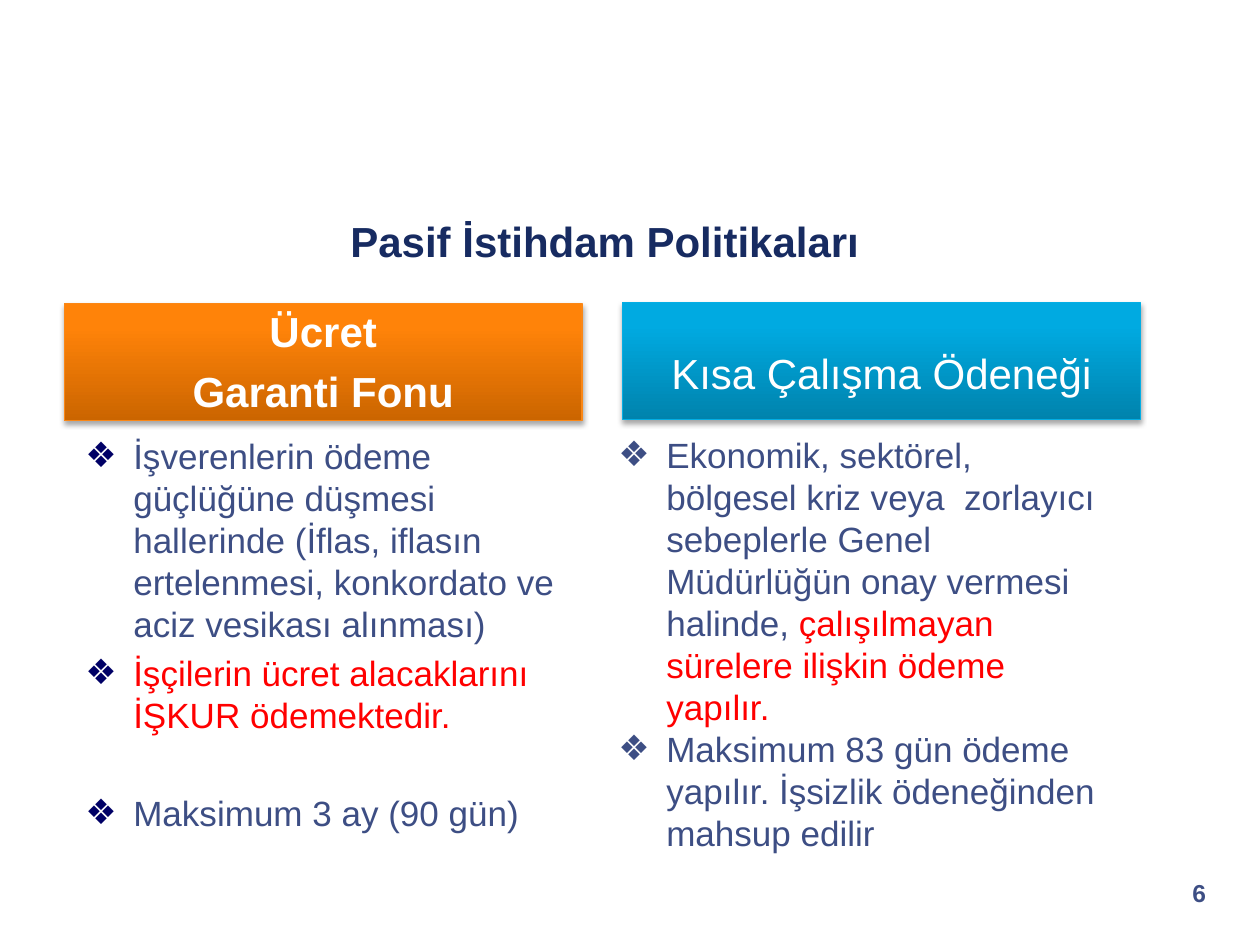
from dataclasses import dataclass

from lxml import etree
from pptx import Presentation
from pptx.dml.color import RGBColor
from pptx.enum import shapes, text
from pptx.oxml import ns
from pptx.util import Inches, Pt


@dataclass(frozen=True)
class Theme:
    font: str = "Arial"
    title: str = "172B61"
    body: str = "3D4E84"
    accent: str = "FF0000"
    bullet: str = "000066"
    white: str = "FFFFFF"
    orange: tuple = ("CB6500", "FF8309", "FA8716")  # dark, light, outline
    blue: tuple = ("0083AD", "00AAE1", "04AEE4")
    head_size: int = 24
    body_size: int = 20
    number_size: int = 14


THEME = Theme()


def rgb(value):
    return RGBColor.from_string(value)


def add_span(para, words, size, color, bold=False):
    span = para.add_run()
    span.text = words
    span.font.name = THEME.font
    span.font.size = Pt(size)
    span.font.bold = bold
    span.font.color.rgb = rgb(color)


def add_box(page, left, top, width, height, anchor=text.MSO_ANCHOR.TOP):
    box = page.shapes.add_textbox(Inches(left), Inches(top), Inches(width), Inches(height))
    box.text_frame.word_wrap = True
    box.text_frame.vertical_anchor = anchor
    return box.text_frame


def add_line(page, place, words, size, color, align):
    """A single bold line, such as the title or the page number."""
    anchor = text.MSO_ANCHOR.MIDDLE if align == text.PP_ALIGN.CENTER else text.MSO_ANCHOR.TOP
    para = add_box(page, *place, anchor).paragraphs[0]
    para.alignment = align
    add_span(para, words, size, color, bold=True)


def add_shadow(shape):
    effects = etree.SubElement(shape._element.spPr, ns.qn("a:effectLst"))
    shadow = etree.SubElement(effects, ns.qn("a:outerShdw"), blurRad=str(Pt(3.1)),
                              dist=str(Pt(1.8)), dir="5400000", rotWithShape="0")
    color = etree.SubElement(shadow, ns.qn("a:srgbClr"), val="000000")
    etree.SubElement(color, ns.qn("a:alpha"), val="35000")


def add_header(page, left, top, lines, colors, bold, insets):
    """A shaded banner with centred lines."""
    dark, light, outline = colors
    banner = page.shapes.add_shape(shapes.MSO_SHAPE.RECTANGLE, Inches(left), Inches(top),
                                   Inches(4.11), Inches(0.93))
    banner.fill.gradient()
    banner.fill.gradient_angle = 90
    for stop, position, color in zip(banner.fill.gradient_stops, (0, 0.8), (dark, light)):
        stop.position = position
        stop.color.rgb = rgb(color)
    banner.line.color.rgb = rgb(outline)
    banner.line.width = Pt(0.75)
    add_shadow(banner)

    frame = banner.text_frame
    frame.word_wrap = True
    frame.vertical_anchor = text.MSO_ANCHOR.MIDDLE
    frame.margin_left = frame.margin_right = Inches(0.19)
    frame.margin_top, frame.margin_bottom = map(Inches, insets)
    for index, line in enumerate(lines):
        para = frame.paragraphs[0] if index == 0 else frame.add_paragraph()
        para.alignment = text.PP_ALIGN.CENTER
        para.line_spacing = 0.9
        if index < len(lines) - 1:
            para.space_after = Pt(8.4)
        add_span(para, line, THEME.head_size, THEME.white, bold)


def add_bullet(para, color):
    props = para._p.get_or_add_pPr()
    props.set("marL", str(Inches(0.38)))
    props.set("indent", str(-Inches(0.38)))
    holder = etree.SubElement(props, ns.qn("a:buClr"))
    etree.SubElement(holder, ns.qn("a:srgbClr"), val=color)
    etree.SubElement(props, ns.qn("a:buFont"), typeface=THEME.font)
    etree.SubElement(props, ns.qn("a:buChar"), char="❖")


def add_list(page, place, items, bullet_color):
    """Bulleted items, each given as (space before, spans)."""
    frame = add_box(page, *place)
    for index, (space, spans) in enumerate(items):
        para = frame.paragraphs[0] if index == 0 else frame.add_paragraph()
        add_bullet(para, bullet_color)
        para.space_before = Pt(space)
        for words, color in spans:
            add_span(para, words, THEME.body_size, color)


def build_page(page):
    # Title
    add_line(page, (0.51, 1.41, 8.58, 1), "Pasif İstihdam Politikaları",
             THEME.head_size, THEME.title, text.PP_ALIGN.CENTER)

    # Wage guarantee fund
    add_header(page, 0.51, 2.41, ["Ücret", "Garanti Fonu"], THEME.orange, True, (0.03, 0))
    add_list(page, (0.58, 3.4, 4.04, 3.55), [
        (0, [("İşverenlerin ödeme güçlüğüne düşmesi hallerinde (İflas, iflasın ertelenmesi, "
              "konkordato ve aciz vesikası alınması)", THEME.body)]),
        (4, [("İşçilerin ücret alacaklarını İŞKUR ödemektedir.", THEME.accent)]),
        (32, [("Maksimum 3 ay (90 gün)", THEME.body)]),
    ], THEME.bullet)

    # Short-time working allowance
    add_header(page, 4.94, 2.4, ["Kısa Çalışma Ödeneği"], THEME.blue, False, (0.35, 0.11))
    add_list(page, (4.81, 3.39, 4.11, 3.47), [
        (0, [("Ekonomik, sektörel, bölgesel kriz veya  zorlayıcı sebeplerle Genel Müdürlüğün "
              "onay vermesi halinde, ", THEME.body),
             ("çalışılmayan sürelere ilişkin ödeme yapılır.", THEME.accent)]),
        (0, [("Maksimum 83 gün ödeme yapılır. İşsizlik ödeneğinden mahsup edilir", THEME.body)]),
    ], THEME.body)

    # Page number
    add_line(page, (9.1, 6.92, 0.57, 0.5), "6", THEME.number_size, THEME.body,
             text.PP_ALIGN.RIGHT)


def main():
    deck = Presentation()
    deck.slide_width, deck.slide_height = Inches(10), Inches(7.5)
    build_page(deck.slides.add_slide(deck.slide_layouts[6]))
    deck.save("out.pptx")


if __name__ == "__main__":
    main()
